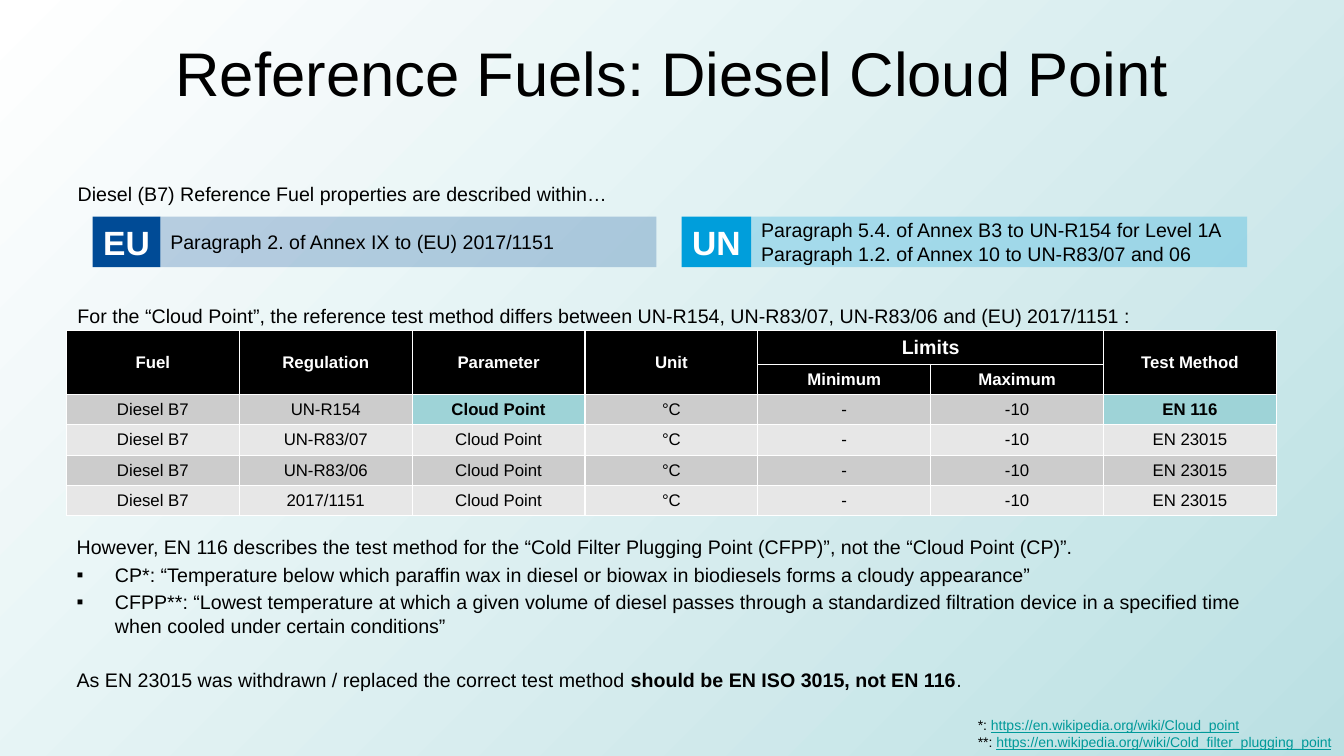
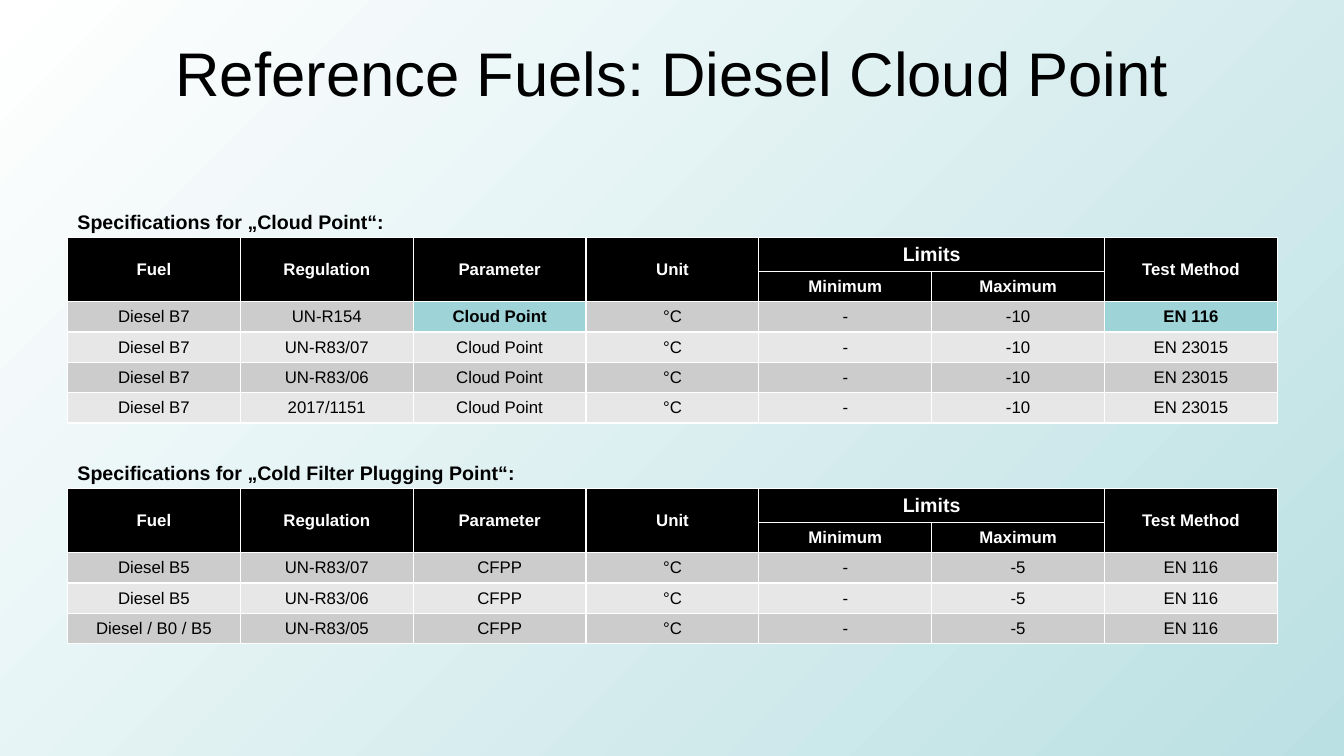
from dataclasses import dataclass

from lxml import etree
from pptx import Presentation
from pptx.dml.color import RGBColor
from pptx.enum.shapes import MSO_SHAPE
from pptx.enum.text import MSO_ANCHOR, MSO_AUTO_SIZE, PP_ALIGN
from pptx.oxml.ns import qn
from pptx.shapes.autoshape import Shape
from pptx.slide import Slide
from pptx.text.text import TextFrame
from pptx.util import Inches, Pt

RECT = MSO_SHAPE.RECTANGLE
TOP, MIDDLE = MSO_ANCHOR.TOP, MSO_ANCHOR.MIDDLE
LEFT, CENTER = PP_ALIGN.LEFT, PP_ALIGN.CENTER
NO_AUTOFIT = MSO_AUTO_SIZE.NONE

FONT = "Arial"
BLACK, WHITE = "000000", "FFFFFF"
BACKGROUND_END, LINK = "BBE0E3", "009999"
EU_BLUE, UN_BLUE = "004B96", "009EDB"
BANDS, HIGHLIGHT = ("CCCCCC", "E7E7E7"), "9ED3D7"
TITLE = "Reference Fuels: Diesel Cloud Point"
MARGIN, CONTENT_W = 0.67, 12
HEADERS = ("Fuel", "Regulation", "Parameter", "Unit", "Limits", "", "Test Method")
LIMITS = {4: "Minimum", 5: "Maximum"}
EMPHASIZED = (2, 6)
LINE_GAP = 2.8


@dataclass
class Badge:
    """A coloured label with a pale bar of references beside it."""
    label: str
    color: str
    left: float
    width: float
    references: tuple[str, ...]


@dataclass
class FuelRow:
    """One table row of a fuel specification."""
    fuel: str
    regulation: str
    parameter: str
    maximum: str
    method: str
    emphasized: bool = False

    def values(self) -> tuple[str, ...]:
        """Return the cell texts in column order."""
        return (self.fuel, self.regulation, self.parameter, "°C", "-",
                self.maximum, self.method)


BADGES = (
    Badge("EU", EU_BLUE, 0.92, 0.67, ("Paragraph 2. of Annex IX to (EU) 2017/1151",)),
    Badge("UN", UN_BLUE, 6.76, 0.69, (
        "Paragraph 5.4. of Annex B3 to UN-R154 for Level 1A",
        "Paragraph 1.2. of Annex 10 to UN-R83/07 and 06")),
)
CLOUD_POINT_ROWS = (
    FuelRow("Diesel B7", "UN-R154", "Cloud Point", "-10", "EN 116", True),
    *(FuelRow("Diesel B7", regulation, "Cloud Point", "-10", "EN 23015")
      for regulation in ("UN-R83/07", "UN-R83/06", "2017/1151")),
)
CFPP_ROWS = tuple(
    FuelRow(fuel, regulation, "CFPP", "-5", "EN 116")
    for fuel, regulation in (("Diesel B5", "UN-R83/07"), ("Diesel B5", "UN-R83/06"),
                             ("Diesel / B0 / B5", "UN-R83/05")))
DEFINITIONS = (
    "CP*: “Temperature below which paraffin wax in diesel or biowax in biodiesels "
    "forms a cloudy appearance”",
    "CFPP**: “Lowest temperature at which a given volume of diesel passes through a "
    "standardized filtration device in a specified time when cooled under certain "
    "conditions”",
)
FOOTNOTES = (
    ("*: ", "https://en.wikipedia.org/wiki/Cloud_point"),
    ("**: ", "https://en.wikipedia.org/wiki/Cold_filter_plugging_point"),
)


def rgb(color: str) -> RGBColor:
    """Turn a hex string into a colour."""
    return RGBColor.from_string(color)


def write(tf: TextFrame, text: str, *, size: float = 14, color: str = BLACK,
          bold: bool = False, underline: bool = False, align: PP_ALIGN = LEFT,
          before: float = 0, bullet: str = "", join: bool = False) -> None:
    """Write a paragraph, or join a run to the last one."""
    p = tf.paragraphs[-1]
    if not join:
        if p.runs:
            p = tf.add_paragraph()
        p_pr = p._p.get_or_add_pPr()
        indent = Inches(0.38) if bullet else 0
        p_pr.set("marL", str(indent))
        p_pr.set("indent", str(-indent))
        if bullet:
            etree.SubElement(p_pr, qn("a:buFont")).set("typeface", FONT)
            etree.SubElement(p_pr, qn("a:buChar")).set("char", bullet)
        else:
            etree.SubElement(p_pr, qn("a:buNone"))
        p.alignment = align
        p.space_before = Pt(before)
    r = p.add_run()
    r.text = text
    r.font.name = FONT
    r.font.size = Pt(size)
    r.font.bold = bold
    r.font.underline = underline
    r.font.color.rgb = rgb(color)


def place(sp: Shape, left: float, top: float, width: float, height: float) -> TextFrame:
    """Move a placeholder and return its top-anchored text frame."""
    sp.left, sp.top = Inches(left), Inches(top)
    sp.width, sp.height = Inches(width), Inches(height)
    tf = sp.text_frame
    tf.auto_size = NO_AUTOFIT
    tf.vertical_anchor = TOP
    return tf


def add_textbox(s: Slide, left: float, top: float, width: float, height: float) -> TextFrame:
    """Add a wrapping text box."""
    tf = s.shapes.add_textbox(Inches(left), Inches(top), Inches(width),
                              Inches(height)).text_frame
    tf.word_wrap = True
    return tf


def add_block(s: Slide, left: float, width: float, color: str, alpha: int = 100) -> TextFrame:
    """Add a borderless rectangle in the badge row."""
    sp = s.shapes.add_shape(RECT, Inches(left), Inches(2.15), Inches(width), Inches(0.5))
    sp.shadow.inherit = False
    sp.line.fill.background()
    sp.fill.solid()
    sp.fill.fore_color.rgb = rgb(color)
    if alpha < 100:
        clr = sp._element.spPr.find(qn("a:solidFill"))[0]
        etree.SubElement(clr, qn("a:alpha")).set("val", str(alpha * 1000))
    tf = sp.text_frame
    tf.margin_top = tf.margin_bottom = 0
    tf.vertical_anchor = MIDDLE
    tf.word_wrap = True
    return tf


def add_badge(s: Slide, badge: Badge) -> None:
    """Draw a badge and its references."""
    bar = add_block(s, badge.left + badge.width, 4.92, badge.color, 25)
    for reference in badge.references:
        write(bar, reference)
    label = add_block(s, badge.left, badge.width, badge.color)
    label.margin_left = label.margin_right = 0
    write(label, badge.label, size=24, color=WHITE, bold=True, align=CENTER)


def add_fuel_table(s: Slide, left: float, top: float, row_h: float,
                   rows: tuple[FuelRow, ...]) -> None:
    """Draw a specification table with a two-row header."""
    count, columns = len(rows) + 2, len(HEADERS)
    table = s.shapes.add_table(count, columns, Inches(left), Inches(top),
                               Inches(CONTENT_W), Inches(row_h * count + 0.03)).table
    table.first_row = table.horz_banding = False
    for i, row in enumerate(table.rows):
        row.height = Inches(row_h if i else row_h + 0.03)
    lower_header = [LIMITS.get(j, "") for j in range(columns)]
    grid = [HEADERS, lower_header, *(row.values() for row in rows)]
    for i, texts in enumerate(grid):
        header = i < 2
        for j, text in enumerate(texts):
            strong = not header and rows[i - 2].emphasized and j in EMPHASIZED
            cell = table.cell(i, j)
            tc_pr = cell._tc.get_or_add_tcPr()
            for side in ("lnL", "lnR", "lnT", "lnB"):
                ln = etree.SubElement(tc_pr, qn(f"a:{side}"), w=str(Pt(1)))
                fill = etree.SubElement(ln, qn("a:solidFill"))
                etree.SubElement(fill, qn("a:srgbClr"), val=WHITE)
            cell.fill.solid()
            cell.fill.fore_color.rgb = rgb(
                BLACK if header else HIGHLIGHT if strong else BANDS[i % 2])
            cell.vertical_anchor = MIDDLE
            if text:
                write(cell.text_frame, text, size=14 if text == "Limits" else 12,
                      color=WHITE if header else BLACK, bold=header or strong,
                      align=CENTER)
    for j in range(columns):
        if j not in LIMITS:
            table.cell(0, j).merge(table.cell(1, j))
    table.cell(0, min(LIMITS)).merge(table.cell(0, max(LIMITS)))


def style_master(prs: Presentation) -> None:
    """Set the shared background and title position."""
    master = prs.slide_master
    fill = master.background.fill
    fill.gradient()
    fill.gradient_angle = 315
    for stop, color in zip(fill.gradient_stops, (WHITE, BACKGROUND_END)):
        stop.color.rgb = rgb(color)
    place(master.placeholders[0], MARGIN, 0.3, CONTENT_W, 1.25)


def add_titled_slide(prs: Presentation, layout: int) -> Slide:
    """Add a slide with the shared title."""
    s = prs.slides.add_slide(prs.slide_layouts[layout])
    write(s.shapes.title.text_frame, TITLE, size=44, align=CENTER)
    return s


def build_comparison(prs: Presentation) -> None:
    """Build the slide on differing test methods."""
    s = add_titled_slide(prs, 3)
    intro = place(s.placeholders[1], MARGIN, 1.75, 6, 0.35)
    write(intro, "Diesel (B7) Reference Fuel properties are described within…")
    for badge in BADGES:
        add_badge(s, badge)
    write(add_textbox(s, MARGIN, 2.97, CONTENT_W, 0.32),
          "For the “Cloud Point”, the reference test method differs between UN-R154, "
          "UN-R83/07, UN-R83/06 and (EU) 2017/1151 :")
    add_fuel_table(s, 0.66, 3.28, 0.3, CLOUD_POINT_ROWS)

    tf = place(s.placeholders[2], 0.66, 5.26, CONTENT_W, 1.69)
    write(tf, "However, EN 116 describes the test method for the “Cold Filter Plugging "
              "Point (CFPP)”, not the “Cloud Point (CP)”.")
    for definition in DEFINITIONS:
        write(tf, definition, before=LINE_GAP, bullet="▪")
    write(tf, "As EN 23015 was withdrawn / replaced the correct test method ", before=22)
    write(tf, "should be EN ISO 3015, not EN 116", bold=True, join=True)
    write(tf, ".", join=True)

    notes = add_textbox(s, 9.6, 7.06, 3.73, 0.44)
    for mark, address in FOOTNOTES:
        write(notes, mark, size=10)
        write(notes, address, size=10, color=LINK, underline=True, join=True)


def build_specifications(prs: Presentation) -> None:
    """Build the slide with both specification tables."""
    s = add_titled_slide(prs, 5)
    for name, top, row_h, rows in (
            ("Cloud Point", 2.03, 0.29, CLOUD_POINT_ROWS),
            ("Cold Filter Plugging Point", 4.52, 0.3, CFPP_ROWS)):
        write(add_textbox(s, MARGIN, top, 5, 0.34), f"Specifications for „{name}“:", bold=True)
        add_fuel_table(s, MARGIN, top + 0.33, row_h, rows)


def main() -> None:
    """Build and save the presentation."""
    prs = Presentation()
    prs.slide_width, prs.slide_height = Inches(13.33), Inches(7.5)
    style_master(prs)
    build_comparison(prs)
    build_specifications(prs)
    prs.save("out.pptx")


if __name__ == "__main__":
    main()
